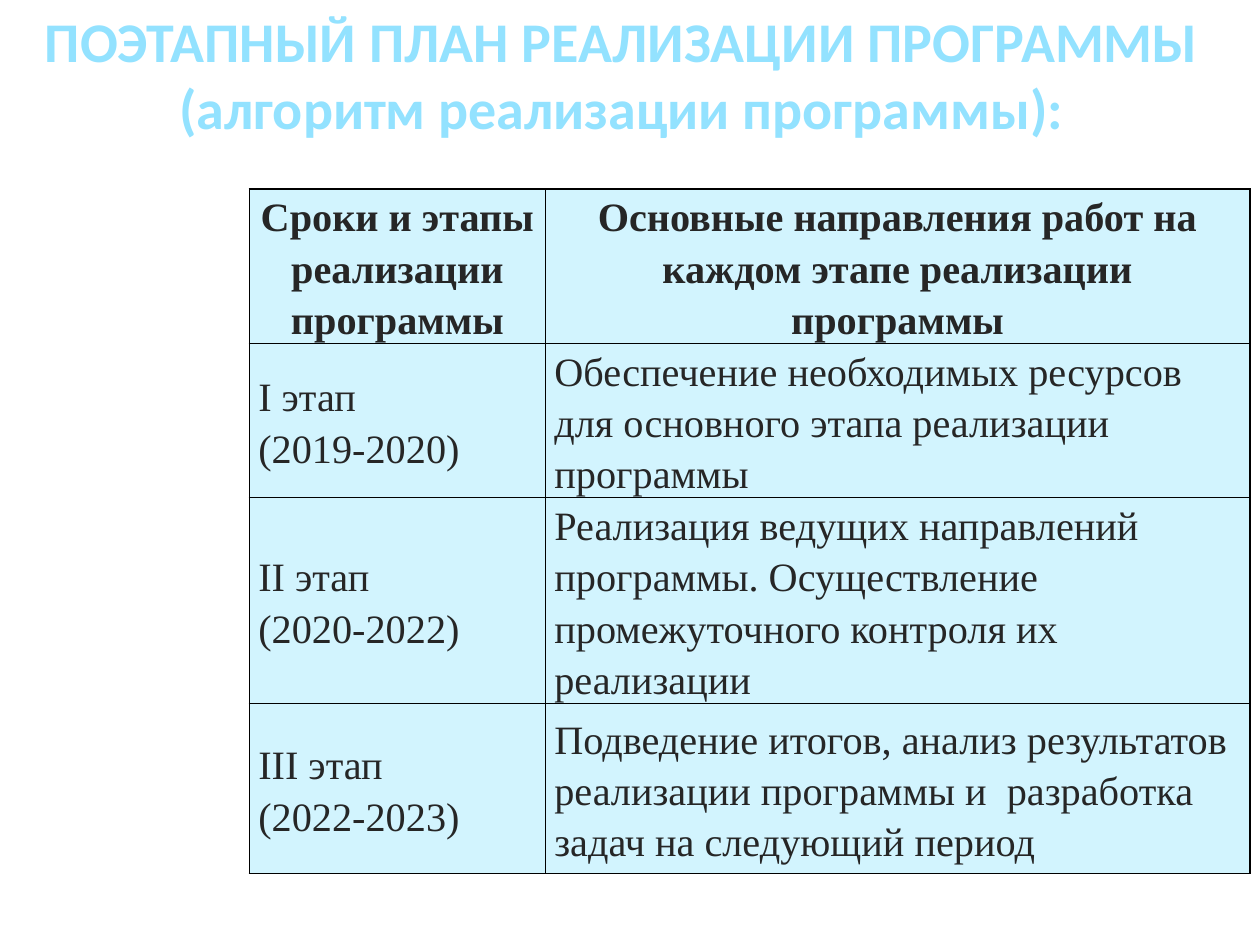
from lxml.etree import SubElement
from pptx import Presentation
from pptx.dml.color import RGBColor
from pptx.enum.text import MSO_ANCHOR, MSO_AUTO_SIZE, PP_ALIGN
from pptx.oxml.ns import qn
from pptx.util import Inches, Pt

TITLE = ["ПОЭТАПНЫЙ ПЛАН РЕАЛИЗАЦИИ ПРОГРАММЫ", "(алгоритм реализации программы):"]
STAGES = [
    (["Сроки и этапы реализации программы"],
     ["Основные направления работ на каждом этапе реализации программы"]),
    (["I этап", "(2019-2020)"],
     ["Обеспечение необходимых ресурсов для основного этапа реализации программы"]),
    (["II этап", "(2020-2022)"],
     ["Реализация ведущих направлений программы. Осуществление "
      "промежуточного контроля их реализации"]),
    (["III этап", "(2022-2023)"],
     ["Подведение итогов, анализ результатов реализации программы "
      "и  разработка задач на следующий период"]),
]
COLUMN_WIDTHS = [2.35, 5.59]
ROW_HEIGHTS = [0.9, 0.9, 1.35, 1.35]


def color(value):
    return RGBColor.from_string(value)


def style_paragraph(paragraph, name, size, value, bold, alignment):
    paragraph.alignment = alignment
    font = paragraph.font
    font.name, font.size, font.bold = name, Pt(size), bold
    font.color.rgb = color(value)


def add_title(slide, left, top, width, height):
    title = slide.shapes.title
    title.left, title.top, title.width, title.height = map(
        Inches, (left, top, width, height))
    frame = title.text_frame
    frame.auto_size = MSO_AUTO_SIZE.NONE
    frame.vertical_anchor = MSO_ANCHOR.MIDDLE
    paragraph = frame.paragraphs[0]
    paragraph.add_run().text = TITLE[0]
    paragraph.add_line_break()
    paragraph.add_run().text = TITLE[1]
    style_paragraph(paragraph, "Calibri", 32, "93E2FF", True, PP_ALIGN.CENTER)


def add_borders(cell, value, width):
    properties = cell._tc.get_or_add_tcPr()
    for position, side in enumerate(("a:lnL", "a:lnR", "a:lnT", "a:lnB")):
        line = properties.makeelement(qn(side), {"w": str(Pt(width))})
        fill = SubElement(line, qn("a:solidFill"))
        SubElement(fill, qn("a:srgbClr"), val=value)
        properties.insert(position, line)


def fill_cell(cell, lines, is_header):
    cell.fill.solid()
    cell.fill.fore_color.rgb = color("D2F4FE")
    cell.margin_left = cell.margin_right = Inches(0.07)
    cell.margin_top = cell.margin_bottom = 0
    cell.vertical_anchor = MSO_ANCHOR.TOP if is_header else MSO_ANCHOR.MIDDLE
    cell.text = "\n".join(lines)
    alignment = PP_ALIGN.CENTER if is_header else PP_ALIGN.LEFT
    for paragraph in cell.text_frame.paragraphs:
        paragraph.line_spacing = 1.15
        style_paragraph(paragraph, "Times New Roman", 23, "262626", is_header, alignment)
    add_borders(cell, "000000", 1)


def add_stage_table(slide, left, top):
    table = slide.shapes.add_table(
        len(STAGES), len(COLUMN_WIDTHS), Inches(left), Inches(top),
        Inches(sum(COLUMN_WIDTHS)), Inches(sum(ROW_HEIGHTS))).table
    table.horz_banding = False
    for column, width in zip(table.columns, COLUMN_WIDTHS):
        column.width = Inches(width)
    for row, height, stage in zip(table.rows, ROW_HEIGHTS, STAGES):
        row.height = Inches(height)
        for cell, lines in zip(row.cells, stage):
            fill_cell(cell, lines, stage is STAGES[0])


def main():
    presentation = Presentation()
    presentation.slide_width, presentation.slide_height = Inches(10), Inches(7.5)
    slide = presentation.slides.add_slide(presentation.slide_layouts[5])
    add_title(slide, -0.23, 0.25, 10.33, 0.67)
    add_stage_table(slide, 1.98, 1.5)
    presentation.save("out.pptx")


if __name__ == "__main__":
    main()
